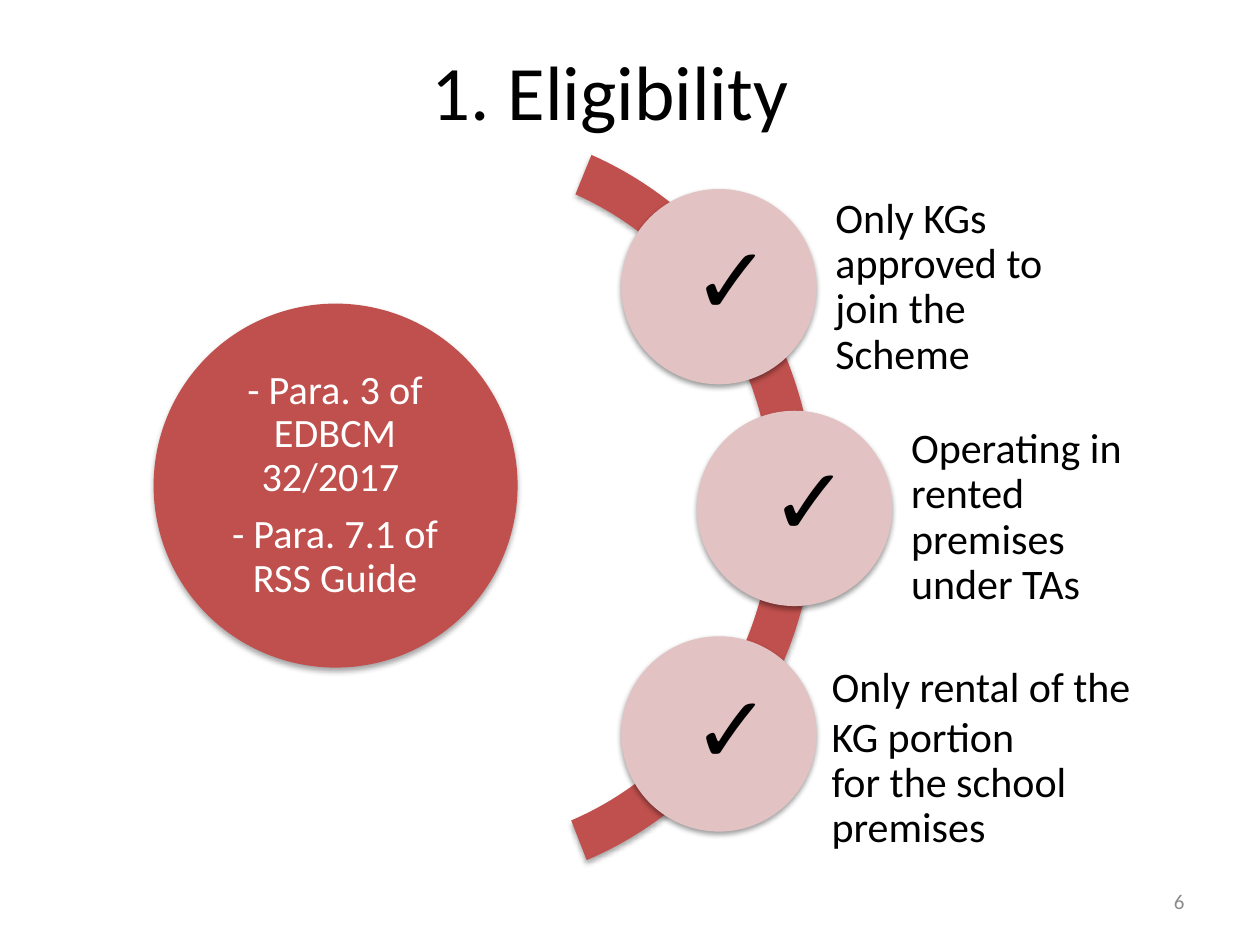
from lxml import etree
from pptx import Presentation
from pptx.dml.color import RGBColor
from pptx.enum import shapes, text
from pptx.oxml import ns
from pptx.util import Pt

COLORS = {"red": "C0504D", "pink": "E2C2C2", "black": "000000", "white": "FFFFFF", "grey": "8C8C8C"}
LEFT, CENTER, RIGHT = text.PP_ALIGN.LEFT, text.PP_ALIGN.CENTER, text.PP_ALIGN.RIGHT
MIDDLE, TOP = text.MSO_ANCHOR.MIDDLE, text.MSO_ANCHOR.TOP

prs = Presentation()
prs.slide_width, prs.slide_height = Pt(720), Pt(540)
slide = prs.slides.add_slide(prs.slide_layouts[6])


def add_figure(kind, box, color, opacity, distance):
    figure = slide.shapes.add_shape(kind, *map(Pt, box))
    figure.fill.solid()
    figure.fill.fore_color.rgb = RGBColor.from_string(COLORS[color])
    figure.line.fill.background()
    figure.shadow.inherit = False
    effects = figure._element.spPr.find(ns.qn("a:effectLst"))
    shadow = etree.SubElement(effects, ns.qn("a:outerShdw"), blurRad=str(Pt(3.1)),
                              dist=str(Pt(distance)), dir="5400000", rotWithShape="0")
    tint = etree.SubElement(shadow, ns.qn("a:srgbClr"), val=COLORS["black"])
    etree.SubElement(tint, ns.qn("a:alpha"), val=str(opacity * 1000))
    return figure


def add_text(box, lines, size, color="black", align=LEFT, anchor=MIDDLE, inset=None):
    frame = slide.shapes.add_textbox(*map(Pt, box)).text_frame
    frame.word_wrap = True
    frame.vertical_anchor = anchor
    if inset is not None:
        frame.margin_left = frame.margin_right = frame.margin_top = frame.margin_bottom = Pt(inset)
    for index, (wording, spacing, after) in enumerate(lines):
        paragraph = frame.paragraphs[0] if index == 0 else frame.add_paragraph()
        paragraph.alignment = align
        paragraph.line_spacing = spacing
        paragraph.space_after = Pt(after)
        run = paragraph.add_run()
        run.text = wording
        run.font.size = Pt(size)
        run.font.name = "Calibri"
        run.font.color.rgb = RGBColor.from_string(COLORS[color])


add_text((65.5, 31.7, 566.6, 39.6), [("1. Eligibility", 1, 0)], 44, align=CENTER)
add_text((516.2, 500.4, 167.8, 28.8), [("6", 1, 0)], 12, "grey", RIGHT)

add_figure(shapes.MSO_SHAPE.OVAL, (87.8, 173.5, 208, 208), "red", 35, 1.8)
references = [("- Para. 3 of EDBCM 32/2017 ", 0.9, 8), ("- Para. 7.1 of RSS Guide", 0.9, 8)]
add_text((118.1, 203.8, 146.9, 146.9), references, 23, "white", CENTER, inset=2.2)

arc = add_figure(shapes.MSO_SHAPE.BLOCK_ARC, (46.8, 71.3, 419, 436.3), "red", 35, 1.8)
for index, value in enumerate((175.28, 41.19, 0.06)):
    arc.adjustments[index] = value
arc.adjustments[2] = 0.058

criteria = [
    ((355, 108), (475.2, 110.2, 149, 108), (388.8, 122.4),
     [("Only KGs approved to join the Scheme", 0.9, 2.4)]),
    ((398.2, 234.7), (518.4, 241.9, 149, 108), (433.4, 248.4),
     [("Operating in rented premises under TAs", 0.9, 2.4)]),
    ((355, 363.6), (473, 378, 193, 108), (388.8, 378.7),
     [("Only rental of the KG portion", 1, 0), ("for the school premises", 0.9, 2.4)]),
]
for circle, label, tick, lines in criteria:
    add_figure(shapes.MSO_SHAPE.OVAL, (*circle, 111.6, 111.6), "pink", 38, 1.6)
    add_text(label, lines, 24, inset=2.2)
    add_text((*tick, 51.1, 72.7), [("✓", 1, 0)], 54, anchor=TOP)

prs.save("out.pptx")
